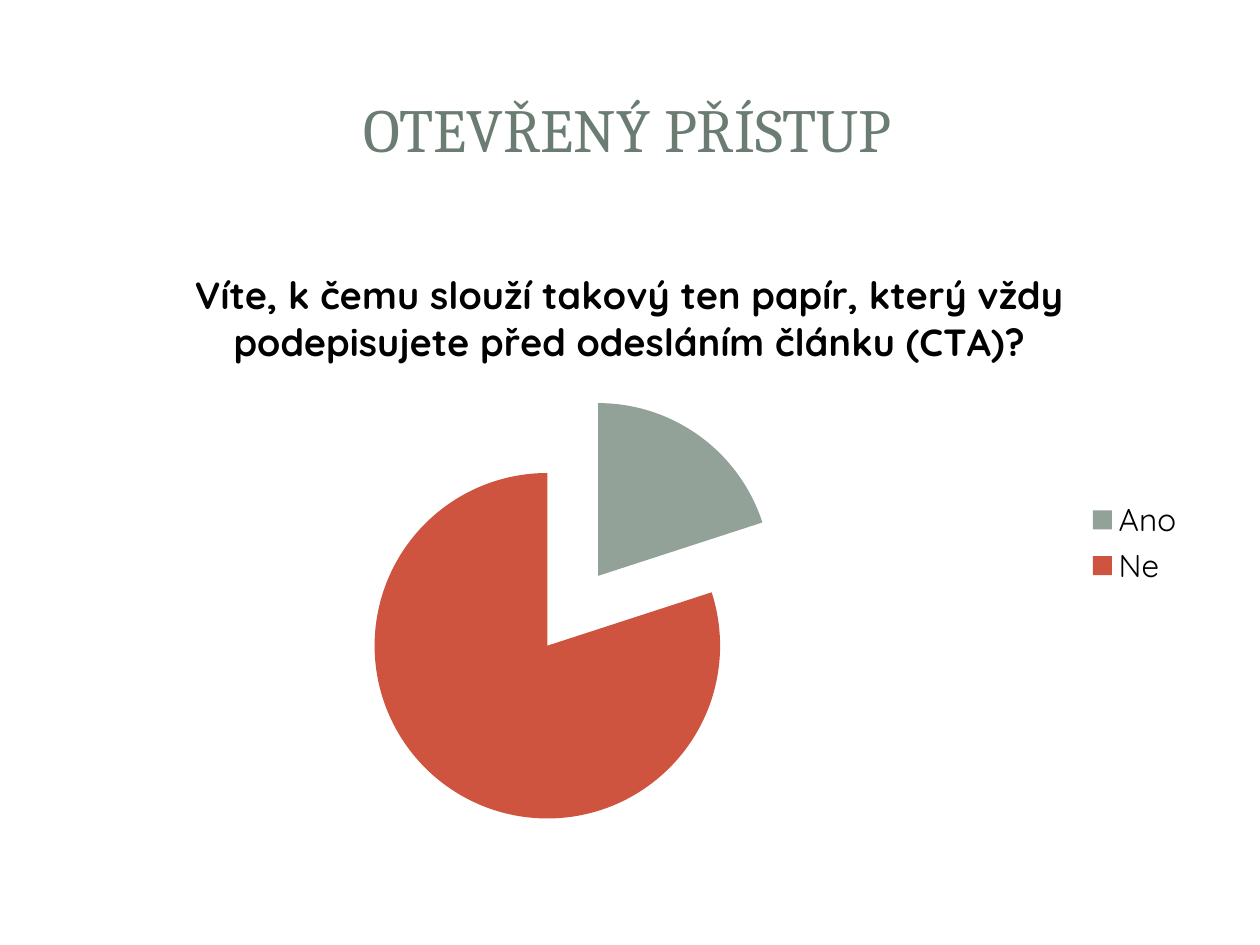
from lxml import etree
from pptx import Presentation
from pptx.chart.data import CategoryChartData
from pptx.dml.color import RGBColor
from pptx.enum.chart import XL_CHART_TYPE, XL_LEGEND_POSITION
from pptx.enum.shapes import MSO_SHAPE
from pptx.enum.text import MSO_ANCHOR, PP_ALIGN
from pptx.oxml.ns import qn
from pptx.util import Pt

PIE = XL_CHART_TYPE.PIE
LEGEND_RIGHT = XL_LEGEND_POSITION.RIGHT
RECTANGLE = MSO_SHAPE.RECTANGLE
MIDDLE = MSO_ANCHOR.MIDDLE
CENTER = PP_ALIGN.CENTER

COLORS = {
    "panel": "FFFFFF",
    "title": "6B7D72",
    "text": "000000",
    "Ano": "93A299",
    "Ne": "CF543F",
}
QUESTION = (
    "Víte, k čemu slouží takový ten papír, který vždy "
    "podepisujete před odesláním článku (CTA)?"
)
ANSWERS = {"Ano": 20, "Ne": 80}
EXPLOSION = 25


def format_font(font, name, size, color):
    font.name = name
    font.size = Pt(size)
    font.color.rgb = RGBColor.from_string(COLORS[color])


def fill_solid(fill, color):
    fill.solid()
    fill.fore_color.rgb = RGBColor.from_string(COLORS[color])


def add_panel(slide, left, top, width, height, opacity=100):
    panel = slide.shapes.add_shape(
        RECTANGLE, Pt(left), Pt(top), Pt(width), Pt(height)
    )
    panel.shadow.inherit = False
    panel.line.fill.background()
    fill_solid(panel.fill, "panel")
    if opacity < 100:
        color = panel._element.spPr.find(qn("a:solidFill"))[0]
        etree.SubElement(color, qn("a:alpha"), val=str(opacity * 1000))
    slide.shapes.title._element.addprevious(panel._element)


def set_title(slide, text):
    title = slide.shapes.title
    title.left, title.top = Pt(33.6), Pt(32.4)
    title.width, title.height = Pt(650), Pt(82)
    frame = title.text_frame
    frame.text = text
    frame.vertical_anchor = MIDDLE
    paragraph = frame.paragraphs[0]
    paragraph.alignment = CENTER
    format_font(paragraph.font, "Cambria", 35, "title")


def explode_series(series, percent):
    explosion = etree.Element(qn("c:explosion"), val=str(percent))
    series._element.find(qn("c:dPt")).addprevious(explosion)


def add_answer_pie(slide):
    data = CategoryChartData()
    data.categories = list(ANSWERS)
    data.add_series(QUESTION, list(ANSWERS.values()))
    frame = slide.shapes.add_chart(PIE, Pt(36), Pt(138), Pt(648), Pt(344.4), data)
    chart = frame.chart
    format_font(chart.font, "Quicksand", 18, "text")

    chart.has_title = True
    title_frame = chart.chart_title.text_frame
    title_frame.text = QUESTION
    title_font = title_frame.paragraphs[0].font
    format_font(title_font, "Quicksand", 21.6, "text")
    title_font.bold = True
    chart.chart_title.include_in_layout = False

    chart.has_legend = True
    chart.legend.position = LEGEND_RIGHT
    chart.legend.include_in_layout = False

    plot = chart.plots[0]
    plot.vary_by_categories = True
    series = plot.series[0]
    for index, answer in enumerate(ANSWERS):
        point_format = series.points[index].format
        fill_solid(point_format.fill, answer)
        point_format.line.fill.background()
    explode_series(series, EXPLOSION)


def main():
    presentation = Presentation()
    presentation.slide_width = Pt(720)
    presentation.slide_height = Pt(540)
    slide = presentation.slides.add_slide(presentation.slide_layouts[5])
    add_panel(slide, 21.6, 21.6, 676.8, 104.4, opacity=83)
    add_panel(slide, 29.5, 29.5, 659.5, 87.8)
    set_title(slide, "OTEVŘENÝ PŘÍSTUP")
    add_answer_pie(slide)
    presentation.save("out.pptx")


if __name__ == "__main__":
    main()
